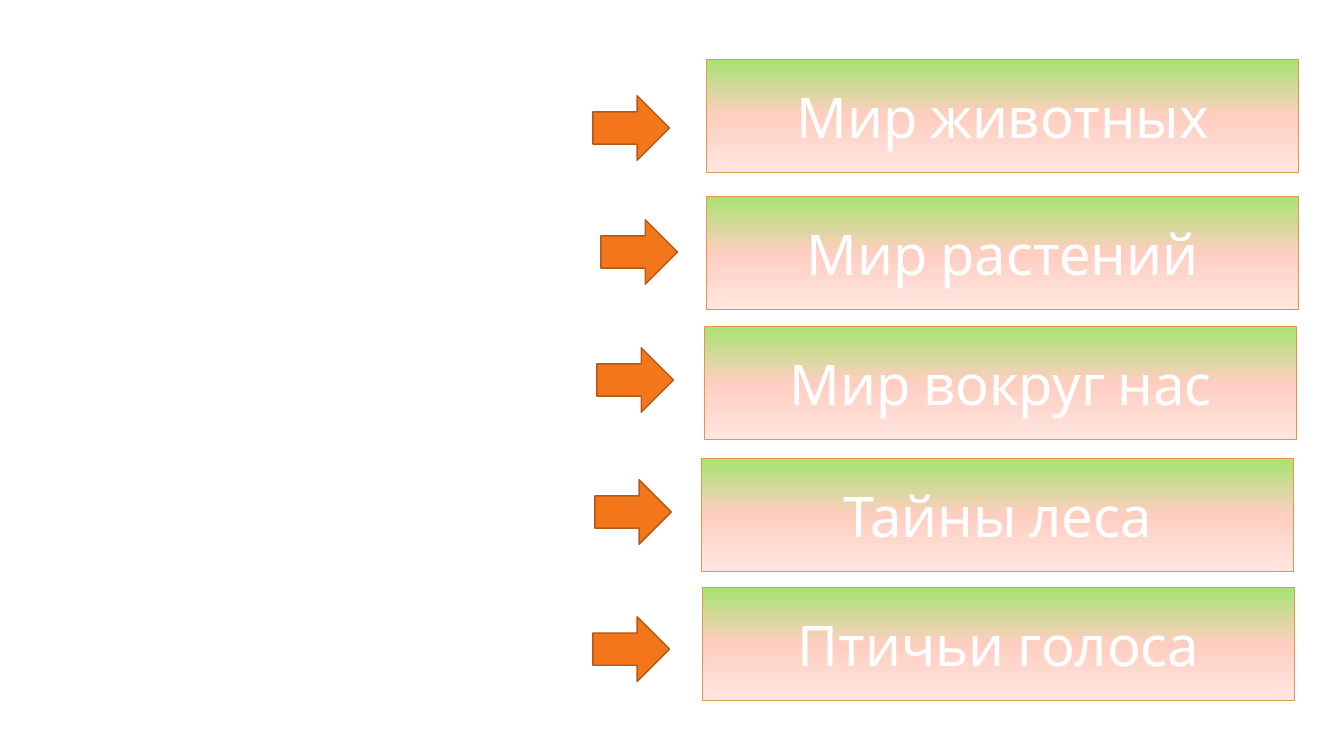
from copy import deepcopy

from pptx import Presentation
from pptx.dml.color import RGBColor
from pptx.enum.shapes import MSO_SHAPE
from pptx.enum.text import MSO_ANCHOR, PP_ALIGN
from pptx.oxml.ns import qn
from pptx.util import Emu, Pt

EMU_PER_PX = 9144  # 100 px to the inch

TOPIC_SIZE = (587, 112)
ARROW_SIZE = (76, 64)
TOPIC_GRADIENT = [(0, "A7E472"), (0.5, "FFCEC1"), (1, "FFE6E0")]

# topic, left and top of its panel, left and top of its arrow
TOPICS = [
    ("Мир животных", (701, 59), (588, 95)),
    ("Мир растений", (701, 195), (596, 218)),
    ("Мир вокруг нас", (699, 324), (592, 345)),
    ("Тайны леса", (696, 455), (590, 476)),
    ("Птичьи голоса", (697, 583), (588, 612)),
]


def px(length):
    return Emu(length * EMU_PER_PX)


def color(hex_string):
    return RGBColor.from_string(hex_string)


def add_outlined(slide, preset, position, size, outline):
    shape = slide.shapes.add_shape(preset, *map(px, position + size))
    shape.shadow.inherit = False
    shape.line.color.rgb = color(outline)
    shape.line.width = Pt(1)
    return shape


def fill_downward(shape, stops):
    """Fill the shape with a gradient from top to bottom."""
    shape.fill.gradient()
    shape.fill.gradient_angle = 270
    stop_list = shape._element.spPr.find(qn("a:gradFill")).find(qn("a:gsLst"))
    while len(stop_list) < len(stops):
        stop_list.append(deepcopy(stop_list[-1]))
    for stop, (position, hex_string) in zip(shape.fill.gradient_stops, stops):
        stop.position = position
        stop.color.rgb = color(hex_string)


def write(shape, text, *, font, size, hex_string):
    frame = shape.text_frame
    frame.word_wrap = True
    frame.vertical_anchor = MSO_ANCHOR.MIDDLE
    paragraph = frame.paragraphs[0]
    paragraph.alignment = PP_ALIGN.CENTER
    run = paragraph.add_run()
    run.text = text
    run.font.name = font
    run.font.size = Pt(size)
    run.font.color.rgb = color(hex_string)


def add_topic(slide, topic, position):
    panel = add_outlined(slide, MSO_SHAPE.RECTANGLE, position, TOPIC_SIZE, "E7954E")
    fill_downward(panel, TOPIC_GRADIENT)
    write(panel, topic, font="Cabin", size=40, hex_string="FFFFFF")


def add_arrow(slide, position):
    arrow = add_outlined(slide, MSO_SHAPE.RIGHT_ARROW, position, ARROW_SIZE, "B45813")
    arrow.fill.solid()
    arrow.fill.fore_color.rgb = color("F3771A")


def main():
    presentation = Presentation()
    presentation.slide_width = px(1333)
    presentation.slide_height = px(750)
    slide = presentation.slides.add_slide(presentation.slide_layouts[6])
    for topic, panel_position, arrow_position in TOPICS:
        add_topic(slide, topic, panel_position)
        add_arrow(slide, arrow_position)
    presentation.save("out.pptx")


if __name__ == "__main__":
    main()
